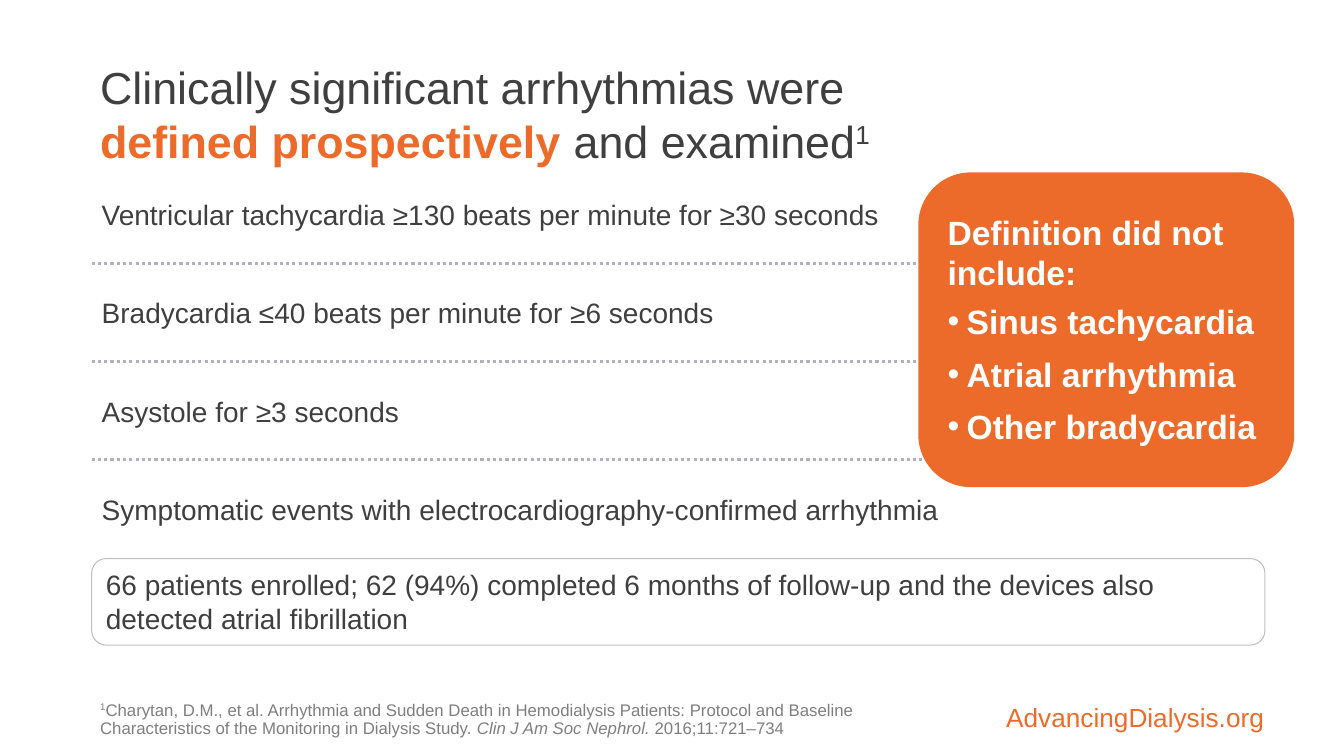
from dataclasses import dataclass
from lxml.etree import SubElement
from pptx import Presentation
from pptx.dml.color import RGBColor
from pptx.enum.dml import MSO_LINE
from pptx.enum.shapes import MSO_CONNECTOR, MSO_SHAPE
from pptx.enum.text import MSO_ANCHOR, PP_ALIGN
from pptx.oxml.ns import qn
from pptx.util import Pt


@dataclass(frozen=True)
class Theme:
    font: str = "Arial"
    ink: str = "3F3F3F"
    accent: str = "ED6B2A"
    white: str = "FFFFFF"
    muted: str = "7F7F7F"
    border: str = "BFBFBF"
    dots: str = "B2B0C0"
    title: float = 32
    callout: float = 24
    body: float = 20
    footer: float = 18.7
    note: float = 12


class Board:
    def __init__(self, slide, theme):
        self.shapes = slide.shapes
        self.theme = theme

    def frame(self, shape, pad=(7.2, 3.6), anchor=MSO_ANCHOR.TOP):
        frame = shape.text_frame
        frame.word_wrap = True
        frame.vertical_anchor = anchor
        frame.margin_left = frame.margin_right = Pt(pad[0])
        frame.margin_top = frame.margin_bottom = Pt(pad[1])
        return frame

    def text(self, box, pad=(7.2, 3.6), anchor=MSO_ANCHOR.TOP):
        return self.frame(self.shapes.add_textbox(*map(Pt, box)), pad, anchor)

    def panel(self, box, fill=None, line=None):
        shape = self.shapes.add_shape(MSO_SHAPE.ROUNDED_RECTANGLE, *map(Pt, box))
        shape.shadow.inherit = False
        if fill:
            shape.fill.solid()
            shape.fill.fore_color.rgb = RGBColor.from_string(fill)
        else:
            shape.fill.background()
        if line:
            shape.line.color.rgb = RGBColor.from_string(line)
            shape.line.width = Pt(0.75)
        else:
            shape.line.fill.background()
        return shape

    def rule(self, left, right, y):
        line = self.shapes.add_connector(
            MSO_CONNECTOR.STRAIGHT, Pt(left), Pt(y), Pt(right), Pt(y))
        line.line.color.rgb = RGBColor.from_string(self.theme.dots)
        line.line.width = Pt(2.25)
        line.line.dash_style = MSO_LINE.ROUND_DOT
        SubElement(line._element.spPr, qn("a:effectLst"))

    def para(self, frame, first=True, align=PP_ALIGN.LEFT, space=1.0, after=0):
        para = frame.paragraphs[0] if first else frame.add_paragraph()
        para.alignment = align
        para.line_spacing = space
        para.space_after = Pt(after)
        return para

    def bullet(self, para, indent):
        props = para._p.get_or_add_pPr()
        props.set("marL", str(Pt(indent)))
        props.set("indent", str(-Pt(indent)))
        SubElement(props, qn("a:buFont"), typeface=self.theme.font)
        SubElement(props, qn("a:buChar"), char="•")

    def run(self, para, words, size, color, bold=False, italic=False, sup=False):
        run = para.add_run()
        run.text = words
        font = run.font
        font.name = self.theme.font
        font.size = Pt(size)
        font.bold = bold
        font.italic = italic
        font.color.rgb = RGBColor.from_string(color)
        if sup:
            run._r.get_or_add_rPr().set("baseline", "30000")


def main():
    deck = Presentation()
    deck.slide_width, deck.slide_height = Pt(960), Pt(540)
    look = Theme()
    board = Board(deck.slides.add_slide(deck.slide_layouts[6]), look)
    left, wide, step = 65.5, 838, 70.2

    # Site address
    frame = board.text((584.6, 479.5, 326.2, 43.9), (7.9, 0), MSO_ANCHOR.BOTTOM)
    para = board.para(frame, align=PP_ALIGN.RIGHT, space=0.9)
    board.run(para, "AdvancingDialysis.org", look.footer, look.accent)

    # Enrolment box
    frame = board.frame(board.panel((left, 399, wide, 61.8), line=look.border))
    board.run(board.para(frame),
              "66 patients enrolled; 62 (94%) completed 6 months of follow-up "
              "and the devices also detected atrial fibrillation",
              look.body, look.ink)

    # Title
    frame = board.text((66.5, 28.8, 612, 104.4), (5, 3.6), MSO_ANCHOR.MIDDLE)
    para = board.para(frame)
    board.run(para, "Clinically significant arrhythmias were ", look.title, look.ink)
    board.run(para, "defined prospectively ", look.title, look.accent, bold=True)
    board.run(para, "and examined", look.title, look.ink)
    board.run(para, "1", look.title, look.ink, sup=True)

    # Criteria with dotted rules between them
    rows = (
        "Ventricular tachycardia ≥130 beats per minute for ≥30 seconds",
        "Bradycardia ≤40 beats per minute for ≥6 seconds",
        "Asystole for ≥3 seconds",
        "Symptomatic events with electrocardiography-confirmed arrhythmia",
    )
    for i, words in enumerate(rows):
        frame = board.text((left, 137.5 + i * step, wide, 31.5))
        board.run(board.para(frame, after=24), words, look.body, look.ink)
        if i < len(rows) - 1:
            board.rule(left, 767.5 + i * 72.7, 188 + i * step)

    # Citation
    frame = board.text((66.5, 486.7, 567.4, 54.7), (5, 3.6), MSO_ANCHOR.MIDDLE)
    para = board.para(frame, space=0.9)
    board.run(para, "1", look.note, look.muted, sup=True)
    board.run(para,
              "Charytan, D.M., et al. Arrhythmia and Sudden Death in Hemodialysis "
              "Patients: Protocol and Baseline Characteristics of the Monitoring "
              "in Dialysis Study. ", look.note, look.muted)
    board.run(para, "Clin J Am Soc Nephrol. ", look.note, look.muted, italic=True)
    board.run(para, "2016;11:721–734", look.note, look.muted)

    # Callout of exclusions
    board.panel((656, 123.2, 268.5, 224.8), fill=look.accent)
    frame = board.text((662.4, 140.4, 257.8, 189.4), (14.4, 3.6), MSO_ANCHOR.MIDDLE)
    board.run(board.para(frame, after=3), "Definition did not include:",
              look.callout, look.white, bold=True)
    for words in ("Sinus tachycardia", "Atrial arrhythmia", "Other bradycardia"):
        para = board.para(frame, first=False, space=1.1, after=6)
        board.bullet(para, 13.7)
        board.run(para, words, look.callout, look.white, bold=True)

    deck.save("out.pptx")


if __name__ == "__main__":
    main()
